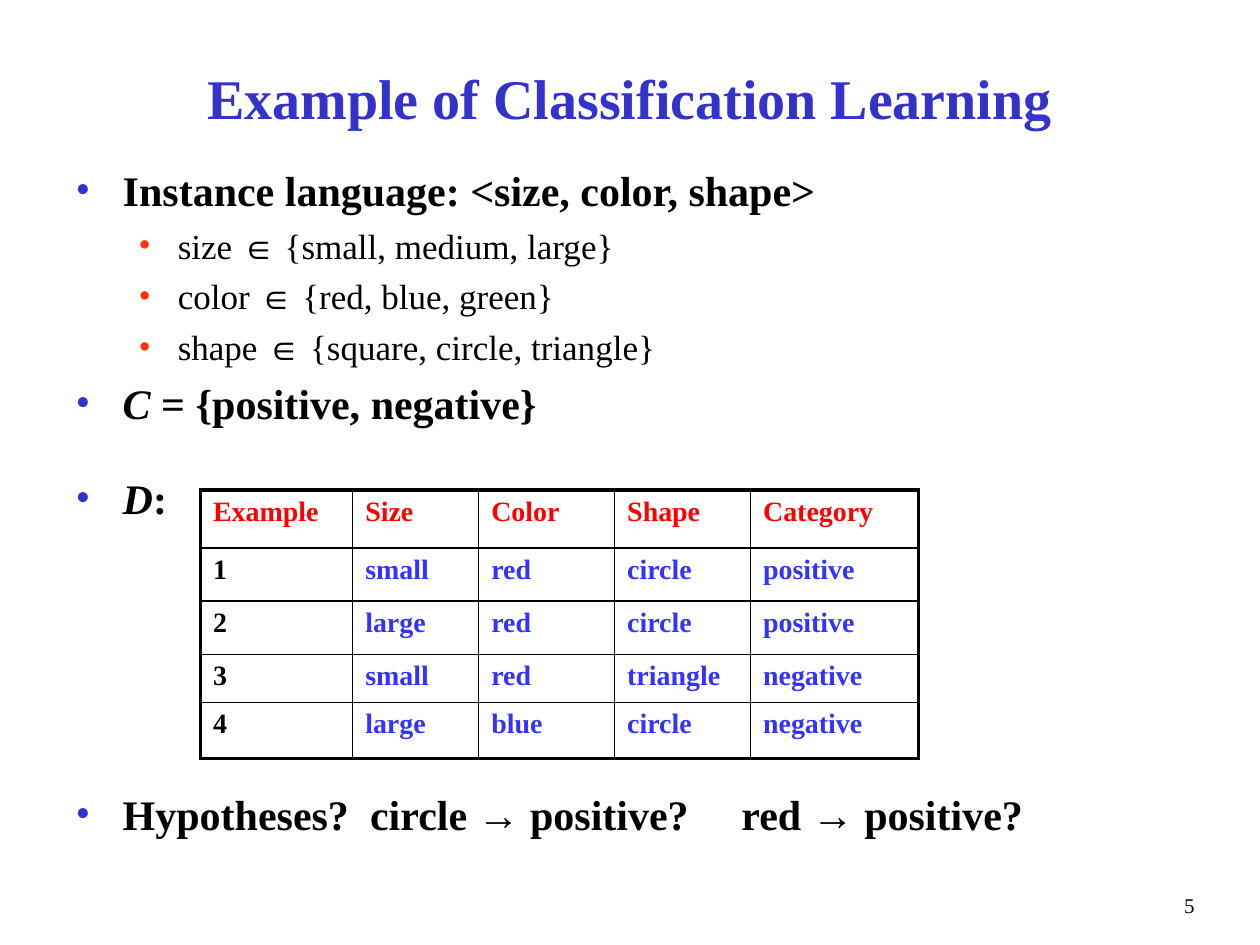
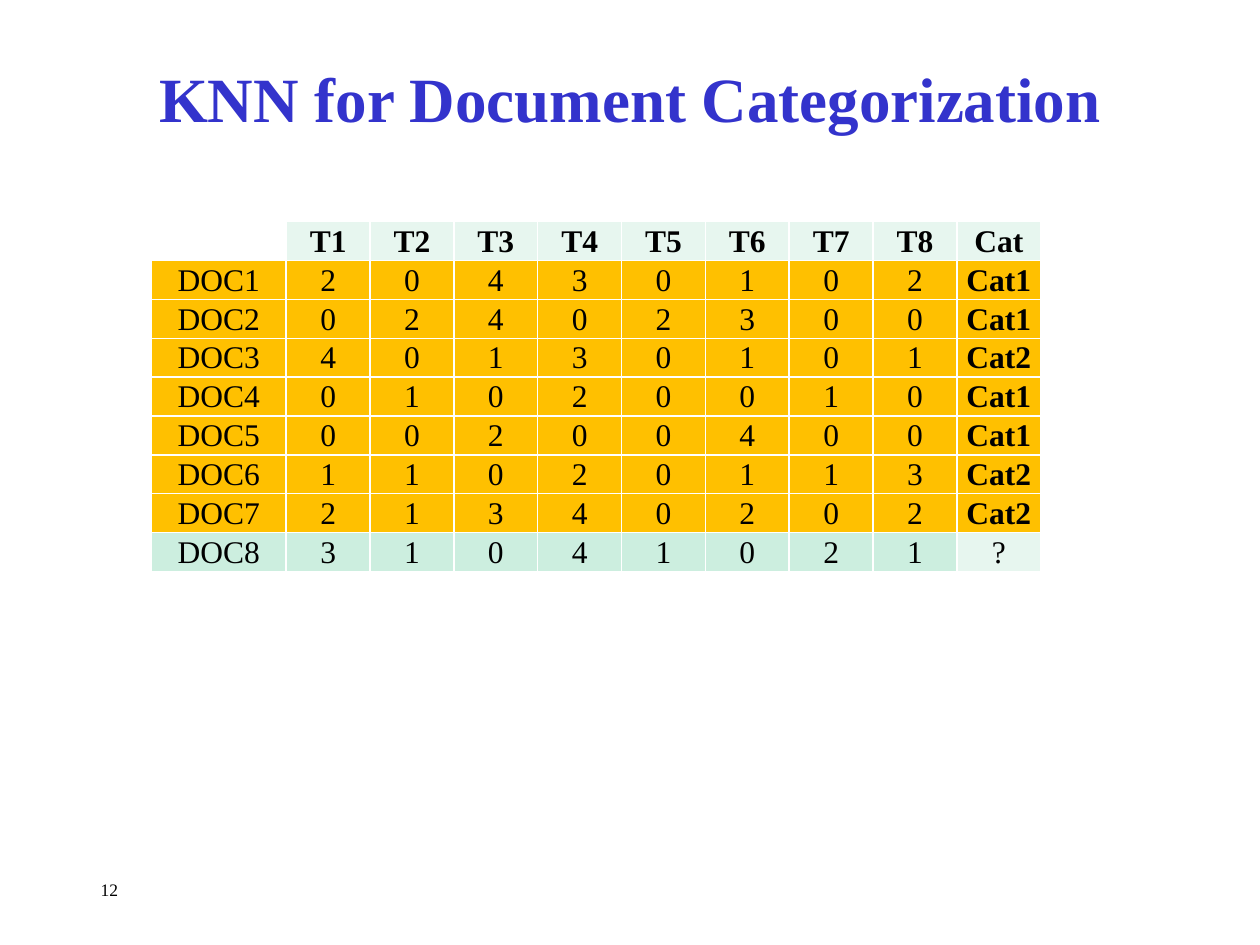
from pptx import Presentation
from pptx.dml.color import RGBColor
from pptx.enum.text import MSO_ANCHOR, MSO_AUTO_SIZE, PP_ALIGN
from pptx.oxml.ns import qn
from pptx.util import Cm, Pt
from lxml.etree import SubElement

FONT = "Times New Roman"
COLORS = {
    "title": "3333CC", "text": "000000", "sub_bullet": "FF3300",
    "header": "FF0000", "value": "3333FF", "grid": "000000",
    "gap": "FFFFFF", "pale": "E7F6EF", "known": "FFC000", "query": "CCEEDF",
}

LEVELS = [
    {"size": 24, "bold": True, "left": 0.95, "hang": 0.95, "bullet": "title"},
    {"size": 20, "bold": False, "left": 2.06, "hang": 0.79, "bullet": "sub_bullet"},
]

# level, space before, runs of (text, italic, letter spacing)
OUTLINE = [
    (0, 2, [("Instance language: <size, color, shape>", False, 0)]),
    (1, 5.5, [("size ∈ {small, medium, large}", False, 0)]),
    (1, 5, [("color ∈ {red, blue, green}", False, 0)]),
    (1, 5, [("shape ∈ {square, circle, triangle}", False, 0)]),
    (0, 5.5, [("C ", True, 0), ("= {positive, negative}", False, 0)]),
    (0, 25.5, [("D", True, 0), (":", False, 0)]),
    (0, 152, [("Hypotheses?", False, 0), (" ", False, 6),
              ("circle → positive?", False, 0), (" ", False, 24),
              ("red → positive?", False, 0)]),
]

EXAMPLES = [
    ["Example", "Size", "Color", "Shape", "Category"],
    ["1", "small", "red", "circle", "positive"],
    ["2", "large", "red", "circle", "positive"],
    ["3", "small", "red", "triangle", "negative"],
    ["4", "large", "blue", "circle", "negative"],
]
EXAMPLE_WIDTHS = [3.07, 2.54, 2.74, 2.74, 3.38]
EXAMPLE_HEIGHTS = [1.17, 1.07, 1.07, 0.97, 1.13]

TERM_COUNTS = [
    ("DOC1", [2, 0, 4, 3, 0, 1, 0, 2], "Cat1"),
    ("DOC2", [0, 2, 4, 0, 2, 3, 0, 0], "Cat1"),
    ("DOC3", [4, 0, 1, 3, 0, 1, 0, 1], "Cat2"),
    ("DOC4", [0, 1, 0, 2, 0, 0, 1, 0], "Cat1"),
    ("DOC5", [0, 0, 2, 0, 0, 4, 0, 0], "Cat1"),
    ("DOC6", [1, 1, 0, 2, 0, 1, 1, 3], "Cat2"),
    ("DOC7", [2, 1, 3, 4, 0, 2, 0, 2], "Cat2"),
    ("DOC8", [3, 1, 0, 4, 1, 0, 2, 1], "?"),
]


def rgb(color):
    return RGBColor.from_string(COLORS[color])


def place(part, left, top, width, height):
    part.left, part.top, part.width, part.height = map(Cm, (left, top, width, height))


def add_run(paragraph, text, size, color="text", bold=False, italic=False):
    run = paragraph.add_run()
    run.text = text
    run.font.name, run.font.size = FONT, Pt(size)
    run.font.bold, run.font.italic = bold, italic
    run.font.color.rgb = rgb(color)
    return run


def set_title(slide, text, size):
    title = slide.shapes.title
    place(title, 1.9, 0.85, 21.6, 2.1)
    frame = title.text_frame
    frame.auto_size = MSO_AUTO_SIZE.NONE
    frame.vertical_anchor = MSO_ANCHOR.MIDDLE
    frame.margin_bottom = 0
    heading = frame.paragraphs[0]
    heading.alignment = PP_ALIGN.CENTER
    add_run(heading, text, size, "title", bold=True)


def add_page_number(slide, number, left, top, width, size, alignment):
    box = slide.shapes.add_textbox(Cm(left), Cm(top), Cm(width), Cm(0.64))
    box.text_frame.word_wrap = True
    line = box.text_frame.paragraphs[0]
    line.alignment = alignment
    add_run(line, number, size)


def set_bullet(paragraph, style):
    properties = paragraph._p.get_or_add_pPr()
    properties.set("marL", str(Cm(style["left"])))
    properties.set("indent", str(-Cm(style["hang"])))
    tint = SubElement(properties, qn("a:buClr"))
    SubElement(tint, qn("a:srgbClr"), val=COLORS[style["bullet"]])
    SubElement(properties, qn("a:buFont"), typeface=FONT)
    SubElement(properties, qn("a:buChar"), char="•")


def fill_outline(body):
    place(body, 1.27, 3.18, 22.86, 14.3)
    frame = body.text_frame
    frame.auto_size = MSO_AUTO_SIZE.NONE
    for index, (level, space, runs) in enumerate(OUTLINE):
        paragraph = frame.add_paragraph() if index else frame.paragraphs[0]
        style = LEVELS[level]
        paragraph.level = level
        paragraph.space_before = Pt(space)
        set_bullet(paragraph, style)
        for text, italic, spacing in runs:
            run = add_run(paragraph, text, style["size"], bold=style["bold"], italic=italic)
            if spacing:
                run.font._element.set("spc", str(spacing * 100))


def add_grid(slide, left, top, widths, heights):
    grid = slide.shapes.add_table(
        len(heights), len(widths), Cm(left), Cm(top),
        Cm(sum(widths)), Cm(sum(heights))).table
    grid.first_row = grid.horz_banding = False
    for column, width in zip(grid.columns, widths):
        column.width = Cm(width)
    for row, height in zip(grid.rows, heights):
        row.height = Cm(height)
    return grid


def set_borders(cell, color, left=1, right=1, top=1, bottom=1):
    properties = cell._tc.get_or_add_tcPr()
    for side, width in zip("LRTB", (left, right, top, bottom)):
        line = SubElement(properties, qn(f"a:ln{side}"), w=str(Pt(width)))
        paint = SubElement(line, qn("a:solidFill"))
        SubElement(paint, qn("a:srgbClr"), val=COLORS[color])


def add_examples(slide):
    grid = add_grid(slide, 4.04, 9.88, EXAMPLE_WIDTHS, EXAMPLE_HEIGHTS)
    last_row, last_column = len(EXAMPLES) - 1, len(EXAMPLE_WIDTHS) - 1

    def weight(on_edge):
        return 2.25 if on_edge else 1

    for r, example in enumerate(EXAMPLES):
        for c, text in enumerate(example):
            cell = grid.cell(r, c)
            set_borders(cell, "grid", weight(c == 0), weight(c == last_column),
                        weight(r == 0), weight(r == last_row))
            cell.fill.background()
            color = "header" if r == 0 else "text" if c == 0 else "value"
            add_run(cell.text_frame.paragraphs[0], text, 16, color, bold=True)


def add_term_counts(slide):
    terms = [f"T{n}" for n in range(1, len(TERM_COUNTS[0][1]) + 1)]
    rows = [["", *terms, "Cat"]]
    rows += [[name, *map(str, counts), category] for name, counts, category in TERM_COUNTS]
    last_column = len(terms) + 1
    grid = add_grid(slide, 3.05, 4.47, [2.72] + [1.69] * last_column, [0.73] * len(rows))
    for r, row in enumerate(rows):
        for c, text in enumerate(row):
            cell = grid.cell(r, c)
            unknown = row[-1] == "?"
            if r == 0:
                fill = "pale" if c else "gap"
            elif unknown:
                fill = "pale" if c == last_column else "query"
            else:
                fill = "known"
            set_borders(cell, "gap")
            cell.fill.solid()
            cell.fill.fore_color.rgb = rgb(fill)
            cell.vertical_anchor = MSO_ANCHOR.MIDDLE
            cell.margin_left = cell.margin_right = cell.margin_top = Cm(0.02)
            cell.margin_bottom = 0
            paragraph = cell.text_frame.paragraphs[0]
            paragraph.alignment = PP_ALIGN.CENTER
            if text:
                bold = r == 0 or (c == last_column and not unknown)
                add_run(paragraph, text, 18, bold=bold)


def main():
    deck = Presentation()
    deck.slide_width, deck.slide_height = Cm(25.4), Cm(19.05)

    learning = deck.slides.add_slide(deck.slide_layouts.get_by_name("Title and Content"))
    add_page_number(learning, "5", 19.05, 17.86, 5.28, 12, PP_ALIGN.RIGHT)
    set_title(learning, "Example of Classification Learning", 32)
    fill_outline(learning.placeholders[1])
    add_examples(learning)

    categorization = deck.slides.add_slide(deck.slide_layouts.get_by_name("Title Only"))
    set_title(categorization, "KNN for Document Categorization", 36)
    add_page_number(categorization, "12", 1.78, 17.6, 9.53, 10, PP_ALIGN.LEFT)
    add_term_counts(categorization)

    deck.save("out.pptx")


if __name__ == "__main__":
    main()
